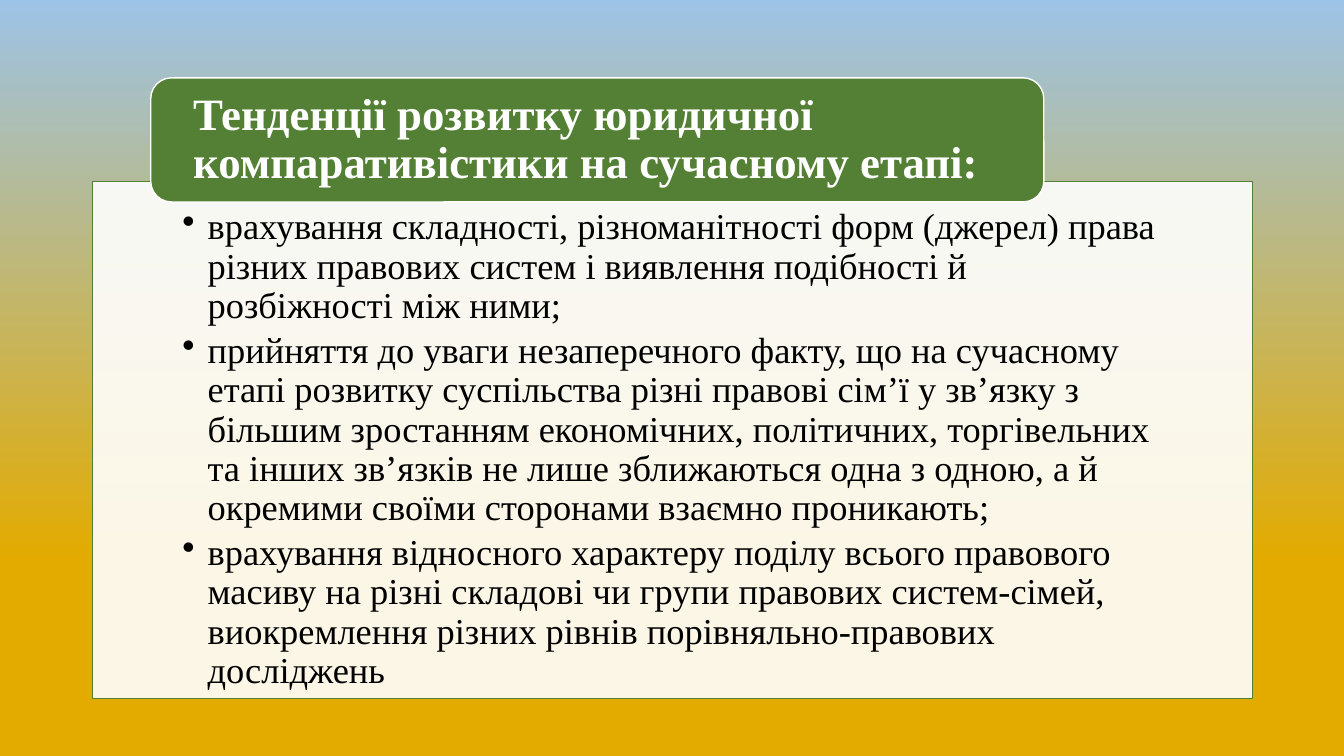
import collections
import pptx
import pptx.util
import pptx.dml.color
import pptx.enum.shapes
import pptx.enum.text
import pptx.oxml.ns
import lxml.etree

Theme = collections.namedtuple("Theme", "sky gold green white black font head body")
THEME = Theme("9DC3E6", "E3AB00", "538035", "FFFFFF", "000000", "Times New Roman", 32, 26)
Box = collections.namedtuple("Box", "left top width height")
WIDE, HIGH = pptx.util.Inches(13.33), pptx.util.Inches(7.5)
KINDS = pptx.enum.shapes.MSO_SHAPE

TITLE = "Тенденції розвитку юридичної компаративістики на сучасному етапі:"
POINTS = [
    "врахування складності, різноманітності форм (джерел) права різних правових систем "
    "і виявлення подібності й розбіжності між ними;",
    "прийняття до уваги незаперечного факту, що на сучасному етапі розвитку суспільства "
    "різні правові сім’ї у зв’язку з більшим зростанням економічних, політичних, "
    "торгівельних та інших зв’язків не лише зближаються одна з одною, а й окремими "
    "своїми сторонами взаємно проникають;",
    "врахування відносного характеру поділу всього правового масиву на різні складові "
    "чи групи правових систем-сімей, виокремлення різних рівнів порівняльно-правових "
    "досліджень",
]


def tint(code):
    return pptx.dml.color.RGBColor.from_string(code)


def part(box, left, top, width, height):
    return Box(
        round(box.left + left * box.width),
        round(box.top + top * box.height),
        round(width * box.width),
        round(height * box.height),
    )


def add(tree, kind, box, fill, line, alpha=None):
    shape = tree.add_shape(kind, *box)
    shape.shadow.inherit = False
    shape.fill.solid()
    shape.fill.fore_color.rgb = tint(fill)
    shape.line.color.rgb = tint(line)
    shape.line.width = pptx.util.Pt(1)
    if alpha:
        name = pptx.oxml.ns.qn("a:srgbClr")
        color = next(shape.fill._xPr.iter(name))
        lxml.etree.SubElement(color, pptx.oxml.ns.qn("a:alpha"), val=str(alpha * 1000))
    return shape


def write(shape, texts, size, color, pads, anchor, after, bold=False, bullet=False):
    frame = shape.text_frame
    frame.word_wrap = True
    frame.vertical_anchor = anchor
    (frame.margin_left, frame.margin_top,
     frame.margin_right, frame.margin_bottom) = map(pptx.util.Inches, pads)
    for index, text in enumerate(texts):
        para = frame.add_paragraph() if index else frame.paragraphs[0]
        para.alignment = pptx.enum.text.PP_ALIGN.LEFT
        para.line_spacing = 0.9
        para.space_after = pptx.util.Pt(round(size * after))
        run = para.add_run()
        run.text = text
        run.font.name = THEME.font
        run.font.size = pptx.util.Pt(size)
        run.font.bold = bold
        run.font.color.rgb = tint(color)
        if bullet:
            para.level = 1
            props = para._p.get_or_add_pPr()
            dent = pptx.util.Inches(0.25)
            props.set("marL", str(dent))
            props.set("indent", str(-dent))
            lxml.etree.SubElement(props, pptx.oxml.ns.qn("a:buChar"), char="•")


def paint(slide):
    fill = slide.background.fill
    fill.gradient()
    fill.gradient_angle = 90
    for stop, place, color in zip(fill.gradient_stops, (0.26, 1), (THEME.gold, THEME.sky)):
        stop.position = place
        stop.color.rgb = tint(color)


def card(slide, box):
    anchors = pptx.enum.text.MSO_ANCHOR
    sheet = add(slide.shapes, KINDS.RECTANGLE, part(box, 0, 1 / 6, 1, 5 / 6),
                THEME.white, THEME.green, alpha=90)
    write(sheet, POINTS, THEME.body, THEME.black, (0.89, 0.27, 0.89, 0.2),
          anchors.TOP, 0.15, bullet=True)
    label = add(slide.shapes, KINDS.ROUNDED_RECTANGLE, part(box, 0.05, 0, 0.77, 0.2),
                THEME.green, THEME.white)
    write(label, [TITLE], THEME.head, THEME.white, (0.36, 0.06, 0.36, 0.06),
          anchors.MIDDLE, 0.35, bold=True)


def main():
    deck = pptx.Presentation()
    deck.slide_width, deck.slide_height = WIDE, HIGH
    slide = deck.slides.add_slide(deck.slide_layouts[6])
    paint(slide)
    card(slide, part(Box(0, 0, WIDE, HIGH), 0.069, 0.103, 0.863, 0.821))
    deck.save("out.pptx")


if __name__ == "__main__":
    main()
